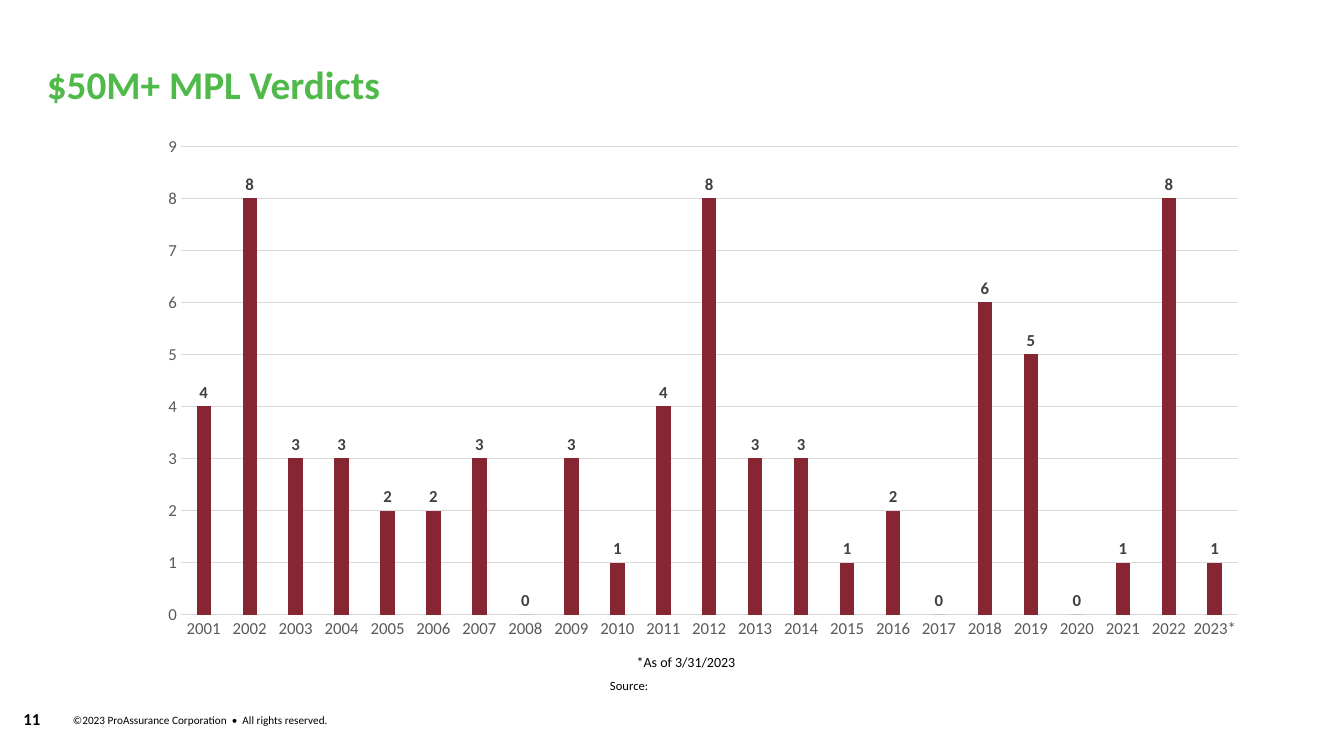
"""Build the slide of $50M+ MPL verdicts by year."""
from pptx import Presentation
from pptx.chart.data import CategoryChartData
from pptx.dml.color import RGBColor
from pptx.enum.chart import XL_CHART_TYPE, XL_LABEL_POSITION, XL_TICK_MARK
from pptx.enum.text import MSO_ANCHOR, PP_ALIGN
from pptx.util import Emu, Pt

FONT = "Calibri"
COLORS = {"text": "000000", "title": "4FB94A", "bar": "862633",
          "axis": "595959", "grid": "D9D9D9", "label": "404040"}

SLIDE = (1344, 756)
CHART_BOX = (146, 126, 1114, 523)
FIRST_YEAR = 2001
VERDICTS = [4, 8, 3, 3, 2, 2, 3, 0, 3, 1, 4, 8, 3, 3, 1, 2, 0, 6, 5, 0, 1, 8, 1]
YEARS = [str(FIRST_YEAR + i) for i in range(len(VERDICTS))]
YEARS[-1] += "*"

TOP, MIDDLE = MSO_ANCHOR.TOP, MSO_ANCHOR.MIDDLE
LEFT, CENTER = PP_ALIGN.LEFT, PP_ALIGN.CENTER
TEXTS = [
    {"text": "©2023 ProAssurance Corporation  •  All rights reserved.",
     "box": (73, 714, 420, 13), "insets": (0, 0), "anchor": MIDDLE,
     "align": LEFT, "size": 8, "bold": False, "color": "text"},
    {"text": "11",
     "box": (-9, 704, 82, 30), "insets": (10, 5), "anchor": MIDDLE,
     "align": CENTER, "size": 12, "bold": True, "color": "text"},
    {"text": "*As of 3/31/2023",
     "box": (564, 649, 244, 33), "insets": (0, 5), "anchor": TOP,
     "align": CENTER, "size": 10, "bold": False, "color": "text"},
    {"text": "$50M+ MPL Verdicts",
     "box": (47, 48, 1213, 78), "insets": (0, 10), "anchor": MIDDLE,
     "align": LEFT, "size": 28, "bold": True, "color": "title", "spacing": 0.9},
    {"text": "Source:",
     "box": (600, 673, 64, 25), "insets": (10, 5), "anchor": TOP,
     "align": LEFT, "size": 9, "bold": False, "color": "text"},
]


def px(n):
    return Emu(round(n * 914400 / 100.8))


def rgb(name):
    return RGBColor.from_string(COLORS[name])


def set_all(obj, values):
    for name, value in values.items():
        setattr(obj, name, value)


def style_font(font, size, color, bold=False):
    set_all(font, {"name": FONT, "size": Pt(size), "bold": bold})
    font.color.rgb = rgb(color)


def style_line(line):
    line.color.rgb = rgb("grid")
    line.width = Pt(0.75)


def add_text(s, item):
    tf = s.shapes.add_textbox(*map(px, item["box"])).text_frame
    side, edge = map(px, item["insets"])
    set_all(tf, {"word_wrap": True, "vertical_anchor": item["anchor"],
                 "margin_left": side, "margin_right": side,
                 "margin_top": edge, "margin_bottom": edge})
    p = tf.paragraphs[0]
    set_all(p, {"alignment": item["align"], "line_spacing": item.get("spacing")})
    r = p.add_run()
    r.text = item["text"]
    style_font(r.font, item["size"], item["color"], item["bold"])


def add_verdict_chart(s):
    data = CategoryChartData(number_format="General")
    data.categories = YEARS
    data.add_series("Verdicts", VERDICTS)
    chart = s.shapes.add_chart(XL_CHART_TYPE.COLUMN_CLUSTERED,
                               *map(px, CHART_BOX), data).chart
    set_all(chart, {"has_legend": False, "has_title": False})
    style_font(chart.font, 10, "text")

    plot = chart.plots[0]
    set_all(plot, {"gap_width": 219, "overlap": -27,
                   "vary_by_categories": False, "has_data_labels": True})
    set_all(plot.data_labels, {"show_value": True,
                               "position": XL_LABEL_POSITION.OUTSIDE_END})
    style_font(plot.data_labels.font, 12, "label", True)
    fill = plot.series[0].format.fill
    fill.solid()
    fill.fore_color.rgb = rgb("bar")

    years, counts = chart.category_axis, chart.value_axis
    for axis in (years, counts):
        set_all(axis, {"major_tick_mark": XL_TICK_MARK.NONE,
                       "minor_tick_mark": XL_TICK_MARK.NONE})
        style_font(axis.tick_labels.font, 12, "axis")
    style_line(years.format.line)
    set_all(counts, {"minimum_scale": 0, "maximum_scale": 9, "major_unit": 1,
                     "has_major_gridlines": True})
    style_line(counts.major_gridlines.format.line)
    counts.format.line.fill.background()


def main():
    prs = Presentation()
    prs.slide_width, prs.slide_height = map(px, SLIDE)
    s = prs.slides.add_slide(prs.slide_layouts[6])
    for item in TEXTS:
        add_text(s, item)
    add_verdict_chart(s)
    prs.save("out.pptx")


if __name__ == "__main__":
    main()
